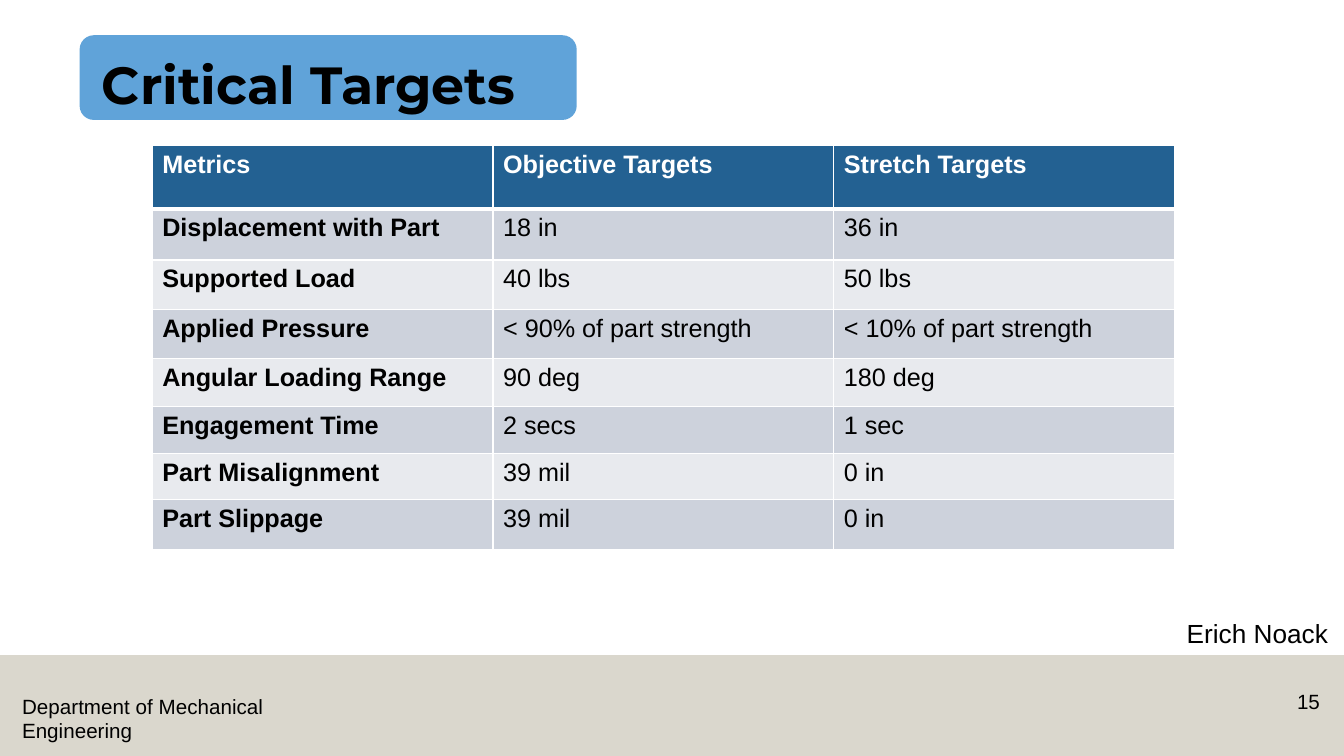
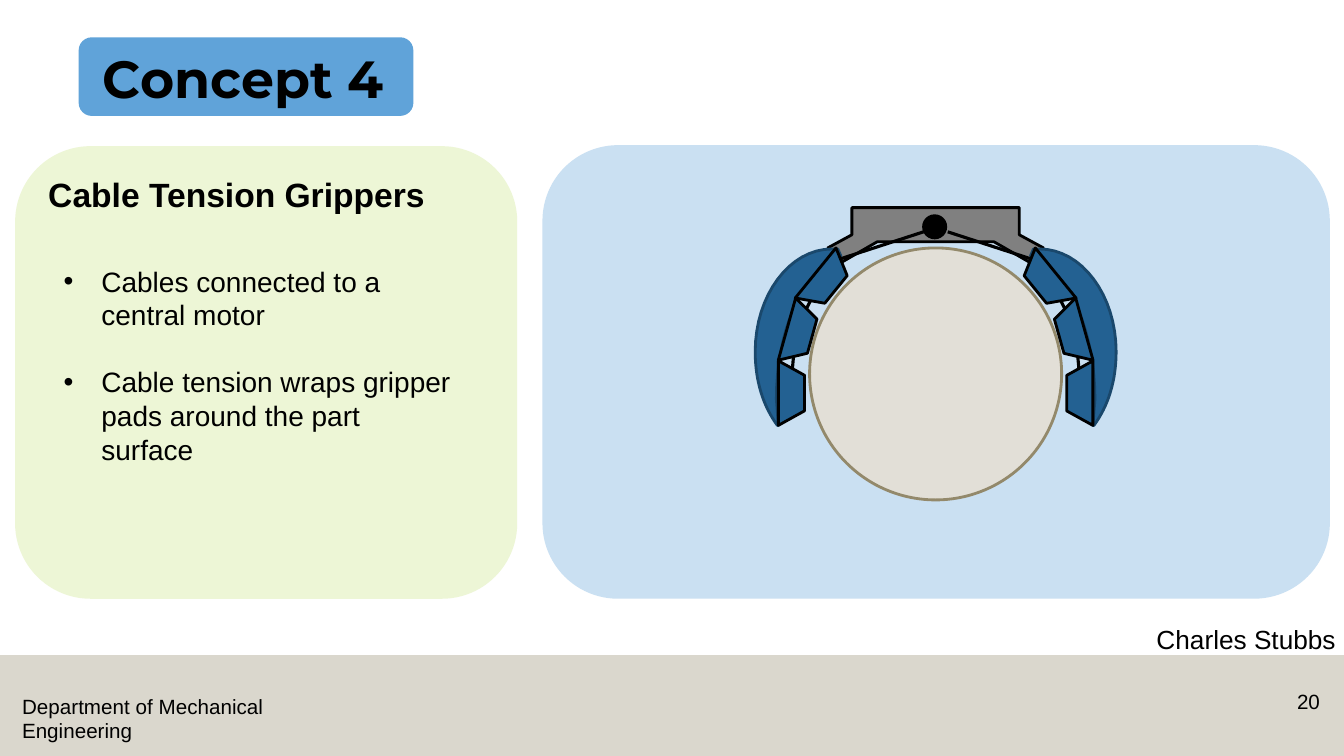
"""Build two slides of a mechanical engineering review: targets table and gripper concept."""
from dataclasses import dataclass
from typing import Optional

from lxml import etree
from pptx import Presentation
from pptx import util as u
from pptx.dml.color import RGBColor
from pptx.enum import shapes, text
from pptx.oxml import ns

ARIAL, MONTSERRAT = "Arial", "Montserrat"
BLACK, WHITE, NAVY, SKY = "000000", "FFFFFF", "236192", "60A3D9"
PALE_BLUE, PALE_GREEN, STONE = "CAE0F2", "EDF6D6", "B7B09C"
ROW_FILLS = ("CDD2DC", "E8EAEE")
AXIS = 9.28
SHAPE = shapes.MSO_SHAPE

Point = tuple[float, float]
Box = tuple[float, float, float, float]


@dataclass
class Page:
    title: str
    title_box: Box
    tab_box: Box
    presenter: str
    presenter_at: Point
    number: str


@dataclass
class Pad:
    center: Point
    angle: float


PAGES = (
    Page("Critical Targets", (0.91, 0.11, 11.5, 1.09), (0.79, 0.35, 4.93, 0.84),
         "Erich Noack", (11.64, 5.99), "15"),
    Page("Concept 4", (0.92, 0.05, 3.32, 1.09), (0.78, 0.37, 3.32, 0.78),
         "Charles Stubbs", (11.34, 6.05), "20"),
)

TARGETS = (
    ("Metrics", "Objective Targets", "Stretch Targets"),
    ("Displacement with Part", "18 in", "36 in"),
    ("Supported Load", "40 lbs", "50 lbs"),
    ("Applied Pressure", "< 90% of part strength", "< 10% of part strength"),
    ("Angular Loading Range", "90 deg", "180 deg"),
    ("Engagement Time", "2 secs", "1 sec"),
    ("Part Misalignment", "39 mil", "0 in"),
    ("Part Slippage", "39 mil", "0 in"),
)
ROW_HEIGHTS = (0.63, 0.51, 0.49, 0.49, 0.47, 0.47, 0.46, 0.49)

BULLETS = (
    "Cables connected to a central motor",
    "Cable tension wraps gripper pads around the part surface",
)

BRACKET_HALF = [(8.45, 2.06), (8.45, 2.33), (8.21, 2.46), (8.3, 2.63), (8.7, 2.4)]
PADS = (Pad((8.19, 2.79), 129.1), Pad((7.93, 3.3), 105.6), Pad((7.85, 3.9), 90))
CABLES = (((8.04, 2.98), (8, 3.06)), ((7.87, 3.54), (7.86, 3.65)), ((9.16, 2.3), (8.33, 2.57)))


def rgb(color: str) -> RGBColor:
    """Turn a hex string into a colour."""
    return RGBColor.from_string(color)


def inches(box) -> list:
    """Turn numbers into lengths."""
    return [u.Inches(v) for v in box]


def apply(obj, **values) -> None:
    """Set each named attribute on an object."""
    for name, value in values.items():
        setattr(obj, name, value)


def write(p, words: str, size: float, color: str = BLACK, bold: bool = False,
          font: str = ARIAL) -> None:
    """Add one formatted run to a paragraph."""
    r = p.add_run()
    r.text = words
    apply(r.font, size=u.Pt(size), bold=bold, name=font)
    r.font.color.rgb = rgb(color)


def add_text(s, box: Box, words: str, size: float, bold: bool = False,
             align=text.PP_ALIGN.LEFT, **frame) -> None:
    """Add a wrapping text box."""
    tf = s.shapes.add_textbox(*inches(box)).text_frame
    apply(tf, word_wrap=True, **frame)
    tf.paragraphs[0].alignment = align
    write(tf.paragraphs[0], words, size, bold=bold)


def paint(sp, fill: str, line: Optional[str] = None):
    """Give a shape a flat fill and an optional 2 pt outline."""
    sp.shadow.inherit = False
    sp.fill.solid()
    sp.fill.fore_color.rgb = rgb(fill)
    if line:
        sp.line.color.rgb = rgb(line)
        sp.line.width = u.Pt(2)
    else:
        sp.line.fill.background()
    return sp


def add_shape(s, kind, box: Box, fill: str, line: Optional[str] = None):
    """Add a painted preset shape."""
    return paint(s.shapes.add_shape(kind, *inches(box)), fill, line)


def add_outline(s, points: list[Point], fill: str, line: str) -> None:
    """Add a closed polygon."""
    start, *rest = [tuple(inches(pt)) for pt in points]
    builder = s.shapes.build_freeform(*start)
    builder.add_line_segments(rest, close=True)
    paint(builder.convert_to_shape(), fill, line)


def add_line(s, start: Point, end: Point) -> None:
    """Add a black cable segment."""
    ln = s.shapes.add_connector(shapes.MSO_CONNECTOR.STRAIGHT, *inches(start + end))
    ln.line.color.rgb = rgb(BLACK)
    ln.line.width = u.Pt(2.25)
    etree.SubElement(ln._element.spPr, ns.qn("a:effectLst"))


def add_page(prs, page: Page, layout: int):
    """Add a slide with its band, footer, title tab and presenter."""
    s = prs.slides.add_slide(prs.slide_layouts[layout])
    band = add_shape(s, SHAPE.RECTANGLE, (0, 6.5, 13.33, 1), STONE)
    tone = band._element.spPr.find(".//" + ns.qn("a:srgbClr"))
    etree.SubElement(tone, ns.qn("a:alpha"), val="50000")
    add_text(s, (0.12, 6.83, 3.59, 0.59), "Department of Mechanical Engineering", 14.7)
    add_text(s, (12.42, 6.79, 0.77, 0.4), page.number, 14.7, align=text.PP_ALIGN.RIGHT)
    left, top = page.presenter_at
    add_text(s, (left, top, 13.33 - left, 0.58), page.presenter, 18.7,
             margin_left=u.Inches(0.13), margin_top=u.Inches(0.13), margin_right=0)
    add_shape(s, SHAPE.ROUNDED_RECTANGLE, page.tab_box, SKY)
    title = s.shapes.title
    place(title, page.title_box)
    tf = title.text_frame
    apply(tf, vertical_anchor=text.MSO_ANCHOR.BOTTOM, auto_size=text.MSO_AUTO_SIZE.NONE,
          word_wrap=True)
    apply(tf.paragraphs[0], alignment=text.PP_ALIGN.LEFT, line_spacing=0.9)
    write(tf.paragraphs[0], page.title, 37.3, bold=True, font=MONTSERRAT)
    s.shapes._spTree.append(title._element)
    return s


def place(sp, box: Box) -> None:
    """Move and size a placeholder."""
    apply(sp, **dict(zip(("left", "top", "width", "height"), inches(box))))


def add_borders(cell, top: float, bottom: float) -> None:
    """Draw white borders round a cell."""
    tc_pr = cell._tc.get_or_add_tcPr()
    for side, width in {"L": 1, "R": 1, "T": top, "B": bottom}.items():
        ln = etree.SubElement(tc_pr, ns.qn(f"a:ln{side}"), w=str(u.Pt(width)))
        fill = etree.SubElement(ln, ns.qn("a:solidFill"))
        etree.SubElement(fill, ns.qn("a:srgbClr"), val=WHITE)


def add_targets(s) -> None:
    """Add the table of critical targets."""
    frame = s.shapes.add_table(len(TARGETS), 3, *inches((1.51, 1.44, 10.13, 4)))
    table = frame.table
    apply(table, first_row=True, horz_banding=False)
    for col in table.columns:
        col.width = u.Inches(3.38)
    for i, (row, height) in enumerate(zip(TARGETS, ROW_HEIGHTS)):
        table.rows[i].height = u.Inches(height)
        for j, words in enumerate(row):
            cell = table.cell(i, j)
            add_borders(cell, 3 if i == 1 else 1, 3 if i == 0 else 1)
            cell.fill.solid()
            cell.fill.fore_color.rgb = rgb(ROW_FILLS[(i - 1) % 2] if i else NAVY)
            write(cell.text_frame.paragraphs[0], words, 18, BLACK if i else WHITE,
                  bold=i == 0 or j == 0)


def bezier(a: Point, b: Point, c: Point, d: Point, steps: int = 16) -> list[Point]:
    """Sample a cubic curve, its start left out."""
    ts = [k / steps for k in range(1, steps + 1)]
    return [tuple((1 - t) ** 3 * w + 3 * t * (1 - t) ** 2 * x + 3 * t * t * (1 - t) * y + t ** 3 * z
                  for w, x, y, z in zip(a, b, c, d)) for t in ts]


def mirror(point: Point) -> Point:
    """Reflect a point across the gripper axis."""
    return 2 * AXIS - point[0], point[1]


def add_finger(s, mirrored: bool) -> None:
    """Add one gripper finger with its pads and cables."""
    def side(point: Point) -> Point:
        """Put a point on this finger's side."""
        return mirror(point) if mirrored else point

    finger = [(8.25, 2.47), (8.31, 2.47), (8.34, 2.54), (8.27, 2.58)]
    finger += bezier(finger[-1], (7.94, 2.75), (7.7, 3.3), (7.7, 3.96))
    finger += [(7.72, 4.22), (7.71, 4.22)]
    finger += bezier(finger[-1], (7.57, 4.03), (7.49, 3.78), (7.49, 3.49))
    finger += bezier(finger[-1], (7.49, 2.93), (7.83, 2.47), finger[0])
    add_outline(s, [side(pt) for pt in finger], NAVY, "1A486C")
    for pad in PADS:
        x, y = side(pad.center)
        sp = add_shape(s, SHAPE.TRAPEZOID, (x - 0.32, y - 0.13, 0.64, 0.26), NAVY, BLACK)
        sp.adjustments[0] = 0.554
        sp.rotation = 360 - pad.angle if mirrored else pad.angle
    for start, end in CABLES:
        add_line(s, side(start), side(end))


def add_gripper(s) -> None:
    """Add the gripper drawing around a round part."""
    bracket = BRACKET_HALF + [mirror(pt) for pt in reversed(BRACKET_HALF)]
    add_outline(s, bracket, "808080", BLACK)
    add_shape(s, SHAPE.OVAL, (8.03, 2.46, 2.5, 2.5), "E2DFD7", "93896B")
    for mirrored in (False, True):
        add_finger(s, mirrored)
    add_shape(s, SHAPE.OVAL, (9.16, 2.14, 0.22, 0.22), BLACK, BLACK)


def add_concept(s) -> None:
    """Add the concept panels, bullet list and drawing."""
    add_shape(s, SHAPE.ROUNDED_RECTANGLE, (5.38, 1.44, 7.81, 4.5), PALE_BLUE)
    add_shape(s, SHAPE.ROUNDED_RECTANGLE, (0.15, 1.45, 4.98, 4.49), PALE_GREEN)
    add_text(s, (0.38, 1.68, 4.59, 0.5), "Cable Tension Grippers", 24, bold=True)
    add_gripper(s)
    body = s.placeholders[1]
    place(body, (0.53, 2.57, 4.1, 2.12))
    tf = body.text_frame
    apply(tf, word_wrap=True, auto_size=text.MSO_AUTO_SIZE.NONE)
    for i, words in enumerate(BULLETS):
        p = tf.add_paragraph() if i else tf.paragraphs[0]
        p.space_before = u.Pt(24 if i else 0)
        write(p, words, 20)
    s.shapes._spTree.append(body._element)


def main() -> None:
    """Build and save the presentation."""
    prs = Presentation()
    apply(prs, slide_width=u.Inches(13.33), slide_height=u.Inches(7.5))
    targets, concept = PAGES
    add_targets(add_page(prs, targets, layout=5))
    add_concept(add_page(prs, concept, layout=1))
    prs.save("out.pptx")


if __name__ == "__main__":
    main()
